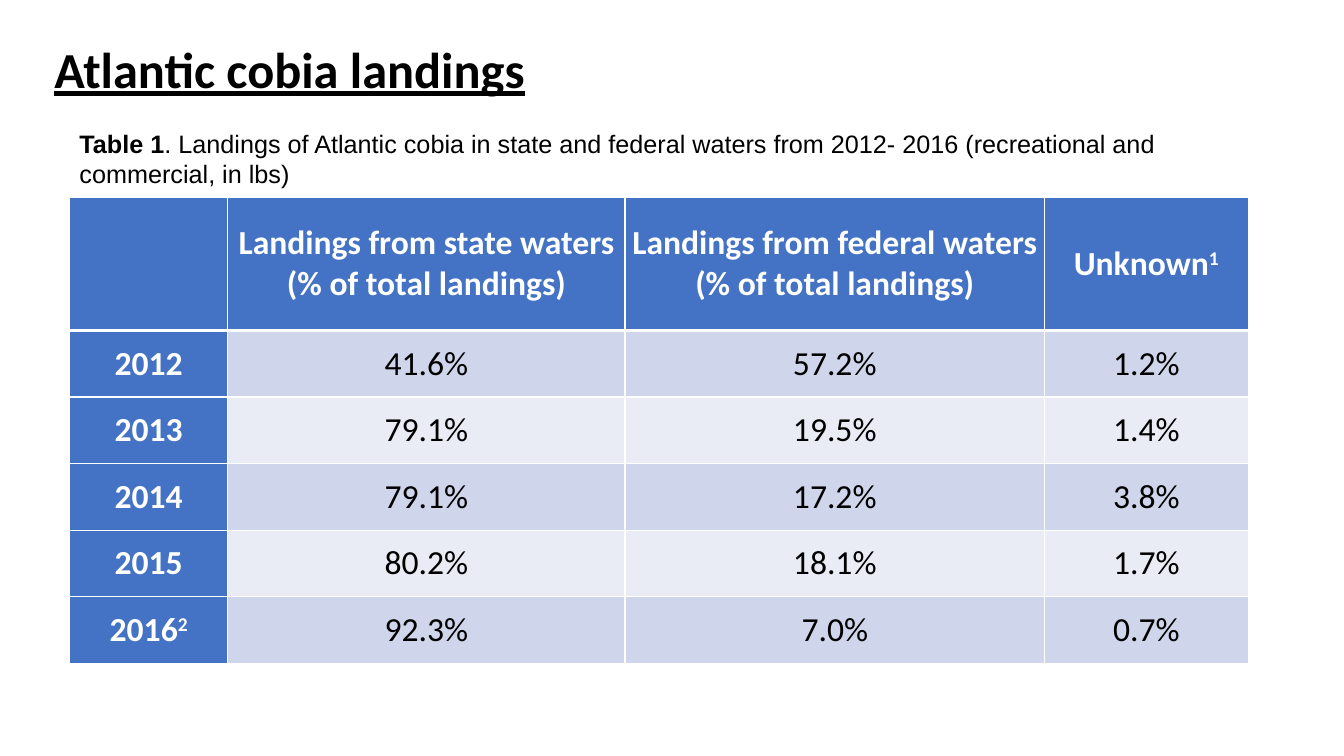
from lxml.etree import SubElement
from pptx import Presentation
from pptx.dml.color import RGBColor
from pptx.enum.text import MSO_ANCHOR, PP_ALIGN
from pptx.oxml.ns import qn
from pptx.util import Inches, Pt

BLACK = RGBColor(0x00, 0x00, 0x00)
WHITE = RGBColor(0xFF, 0xFF, 0xFF)
BLUE = RGBColor(0x44, 0x72, 0xC4)
BAND_DARK = RGBColor(0xCF, 0xD5, 0xEA)
BAND_LIGHT = RGBColor(0xE9, 0xEB, 0xF5)

COLUMN_WIDTHS = (1.57, 3.94, 4.16, 2.02)
HEADER_HEIGHT = 1.32
ROW_HEIGHT = 0.66
LANDINGS = (
    (("",), ("Landings from state waters (% of total landings)",),
     ("Landings from federal waters (% of total landings)",), ("Unknown", "1")),
    (("2012",), ("41.6%",), ("57.2%",), ("1.2%",)),
    (("2013",), ("79.1%",), ("19.5%",), ("1.4%",)),
    (("2014",), ("79.1%",), ("17.2%",), ("3.8%",)),
    (("2015",), ("80.2%",), ("18.1%",), ("1.7%",)),
    (("2016", "2"), ("92.3%",), ("7.0%",), ("0.7%",)),
)


def write_text(paragraph, text, size=24, font="Calibri", color=BLACK,
               bold=False, underline=False, raised=False):
    """Add one formatted run to a paragraph."""
    run = paragraph.add_run()
    run.text = text
    run.font.size = Pt(size)
    run.font.name = font
    run.font.color.rgb = color
    run.font.bold = bold
    run.font.underline = underline
    if raised:
        run._r.get_or_add_rPr().set("baseline", "30000")


def add_text_box(slide, box, anchor):
    """Add a wrapping text box and return its first paragraph."""
    frame = slide.shapes.add_textbox(*map(Inches, box)).text_frame
    frame.word_wrap = True
    frame.vertical_anchor = anchor
    return frame.paragraphs[0]


def add_title(slide, box):
    """Place the underlined slide title."""
    paragraph = add_text_box(slide, box, MSO_ANCHOR.MIDDLE)
    paragraph.line_spacing = 0.9
    write_text(paragraph, "Atlantic cobia landings", size=36, bold=True, underline=True)


def add_caption(slide, box):
    """Place the table caption with its bold label."""
    paragraph = add_text_box(slide, box, MSO_ANCHOR.TOP)
    write_text(paragraph, "Table 1", size=18, font="Arial", bold=True)
    write_text(paragraph, ". Landings of Atlantic cobia in state and federal waters "
               "from 2012- 2016 (recreational and commercial, in lbs)", size=18, font="Arial")


def add_borders(cell, row_index):
    """Draw white cell borders, heavier between the header and the body."""
    widths = {"L": 1, "R": 1, "T": 3 if row_index == 1 else 1, "B": 3 if row_index == 0 else 1}
    properties = cell._tc.get_or_add_tcPr()
    for side, width in widths.items():
        line = SubElement(properties, qn(f"a:ln{side}"), w=str(Pt(width)))
        fill = SubElement(line, qn("a:solidFill"))
        SubElement(fill, qn("a:srgbClr"), val=str(WHITE))


def fill_cell(cell, parts, row_index, column_index):
    """Format one cell by its place in the table and write its text."""
    is_heading = row_index == 0 or column_index == 0
    cell.vertical_anchor = MSO_ANCHOR.MIDDLE
    cell.margin_left = cell.margin_right = Inches(0.07)
    cell.margin_top = cell.margin_bottom = 0
    add_borders(cell, row_index)
    cell.fill.solid()
    band = BAND_DARK if row_index % 2 else BAND_LIGHT
    cell.fill.fore_color.rgb = BLUE if is_heading else band
    paragraph = cell.text_frame.paragraphs[0]
    paragraph.alignment = PP_ALIGN.CENTER
    for part_index, text in enumerate(parts):
        if text:
            write_text(paragraph, text, color=WHITE if is_heading else BLACK,
                       bold=is_heading, raised=part_index > 0)


def add_landings_table(slide, left, top):
    """Place the landings table at the given corner."""
    row_heights = [HEADER_HEIGHT] + [ROW_HEIGHT] * (len(LANDINGS) - 1)
    box = (left, top, sum(COLUMN_WIDTHS), sum(row_heights))
    table = slide.shapes.add_table(len(LANDINGS), len(COLUMN_WIDTHS), *map(Inches, box)).table
    table.first_col = True
    for column, width in zip(table.columns, COLUMN_WIDTHS):
        column.width = Inches(width)
    for row_index, (row, height) in enumerate(zip(table.rows, row_heights)):
        row.height = Inches(height)
        for column_index, parts in enumerate(LANDINGS[row_index]):
            fill_cell(table.cell(row_index, column_index), parts, row_index, column_index)


def main():
    """Build and save the slide."""
    presentation = Presentation()
    presentation.slide_width = Inches(13.33)
    presentation.slide_height = Inches(7.5)
    slide = presentation.slides.add_slide(presentation.slide_layouts[6])
    add_title(slide, (0.44, -0.01, 11.5, 1.45))
    add_landings_table(slide, 0.69, 1.96)
    add_caption(slide, (0.69, 1.22, 11.86, 0.71))
    presentation.save("out.pptx")


if __name__ == "__main__":
    main()
